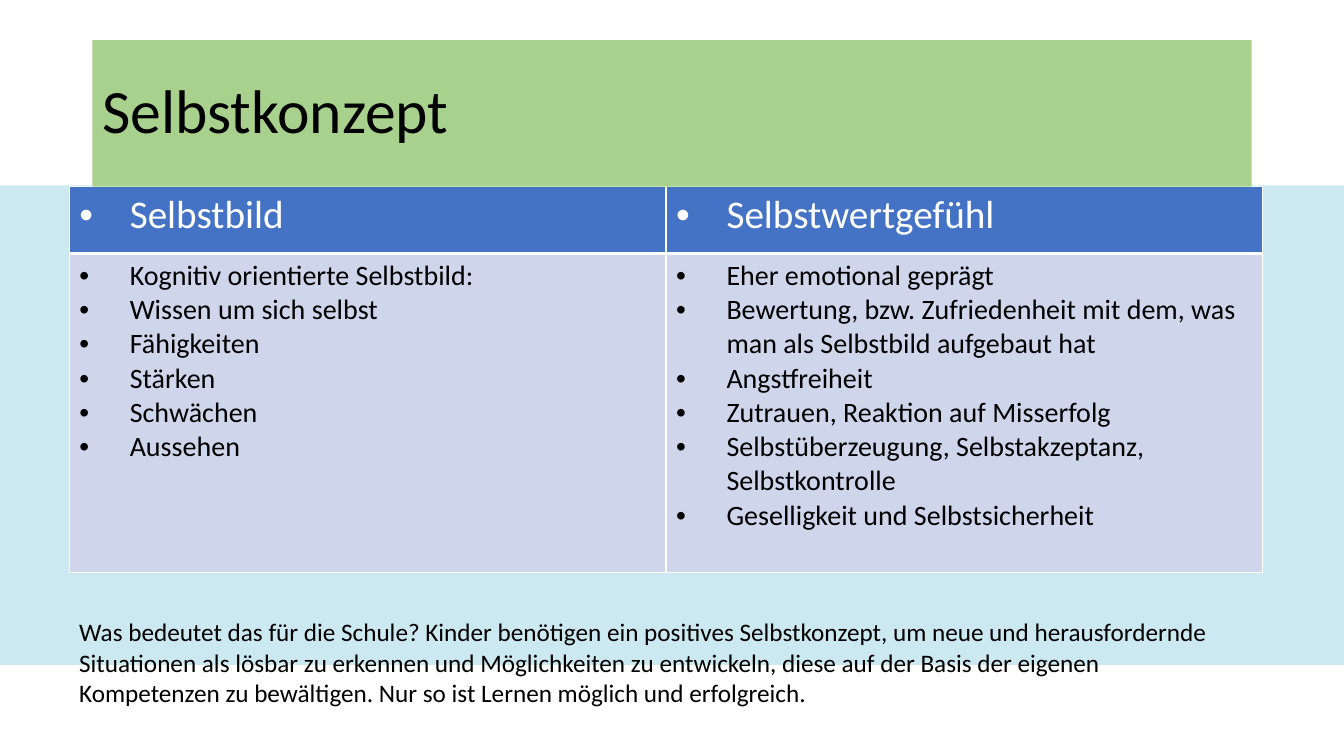
"""Build the Selbstkonzept slide with a two-column table."""
from lxml.etree import SubElement
from pptx import Presentation
from pptx.dml.color import RGBColor
from pptx.enum.shapes import MSO_SHAPE as Shape
from pptx.enum.text import MSO_ANCHOR as Anchor, MSO_AUTO_SIZE as Fit, PP_ALIGN as Align
from pptx.oxml import parse_xml
from pptx.oxml.ns import nsdecls, qn
from pptx.util import Pt


def paint(fill, color):
    fill.solid()
    fill.fore_color.rgb = RGBColor.from_string(color)


def style(frame, size, color, bullet=False):
    for para in frame.paragraphs:
        if bullet:
            props = para._p.get_or_add_pPr()
            props.set("marL", str(Pt(36)))
            props.set("indent", str(-Pt(36)))
            SubElement(props, qn("a:buFont"), typeface="Arial")
            SubElement(props, qn("a:buChar"), char="•")
        for run in para.runs:
            run.font.name = "Calibri"
            run.font.size = Pt(size)
            run.font.bold = False
            paint(run.font.fill, color)


deck = Presentation()
deck.slide_width, deck.slide_height = Pt(960), Pt(540)
slide = deck.slides.add_slide(deck.slide_layouts[5])
shapes = slide.shapes

band = shapes.add_shape(Shape.RECTANGLE, Pt(0), Pt(132.5), Pt(960), Pt(342.5))
band.shadow.inherit = False
paint(band.fill, "CCE9F2")
band.line.fill.background()

rows = [
    ("Selbstbild", "Selbstwertgefühl"),
    (
        "Kognitiv orientierte Selbstbild:\nWissen um sich selbst\nFähigkeiten\n"
        "Stärken\nSchwächen\nAussehen",
        "Eher emotional geprägt\n"
        "Bewertung, bzw. Zufriedenheit mit dem, was man als Selbstbild aufgebaut hat\n"
        "Angstfreiheit\nZutrauen, Reaktion auf Misserfolg\n"
        "Selbstüberzeugung, Selbstakzeptanz, Selbstkontrolle\n"
        "Geselligkeit und Selbstsicherheit",
    ),
]
looks = [(48, 28, "FFFFFF", "4472C4", 3), (228, 20, "000000", "CFD5EA", 1)]
grid = shapes.add_table(2, 2, Pt(49.5), Pt(133), Pt(852.5), Pt(276)).table
for row, texts, (high, size, ink, back, base) in zip(grid.rows, rows, looks):
    row.height = Pt(high)
    for cell, text in zip(row.cells, texts):
        cell.text_frame.text = text
        style(cell.text_frame, size, ink, bullet=True)
        paint(cell.fill, back)
        props = cell._tc.get_or_add_tcPr()
        for spot, side in enumerate("LRTB"):
            width = Pt(base if side == "B" else 1)
            props.insert(spot, parse_xml(
                f'<a:ln{side} {nsdecls("a")} w="{width}"><a:solidFill>'
                f'<a:srgbClr val="FFFFFF"/></a:solidFill></a:ln{side}>'))

title = shapes.title
title.left, title.top, title.width, title.height = Pt(66), Pt(28.75), Pt(828), Pt(104.5)
paint(title.fill, "A9D18E")
frame = title.text_frame
frame.text = "Selbstkonzept"
frame.auto_size = Fit.NONE
frame.vertical_anchor = Anchor.MIDDLE
frame.paragraphs[0].alignment = Align.LEFT
frame.paragraphs[0].line_spacing = 0.9
style(frame, 44, "000000")
shapes._spTree.append(title._element)

note = shapes.add_textbox(Pt(49.5), Pt(437), Pt(844.5), Pt(72.7)).text_frame
note.word_wrap = True
note.auto_size = Fit.SHAPE_TO_FIT_TEXT
note.text = (
    "Was bedeutet das für die Schule? Kinder benötigen ein positives Selbstkonzept, "
    "um neue und herausfordernde Situationen als lösbar zu erkennen und Möglichkeiten "
    "zu entwickeln, diese auf der Basis der eigenen Kompetenzen zu bewältigen. "
    "Nur so ist Lernen möglich und erfolgreich."
)
style(note, 18, "000000")

deck.save("out.pptx")
